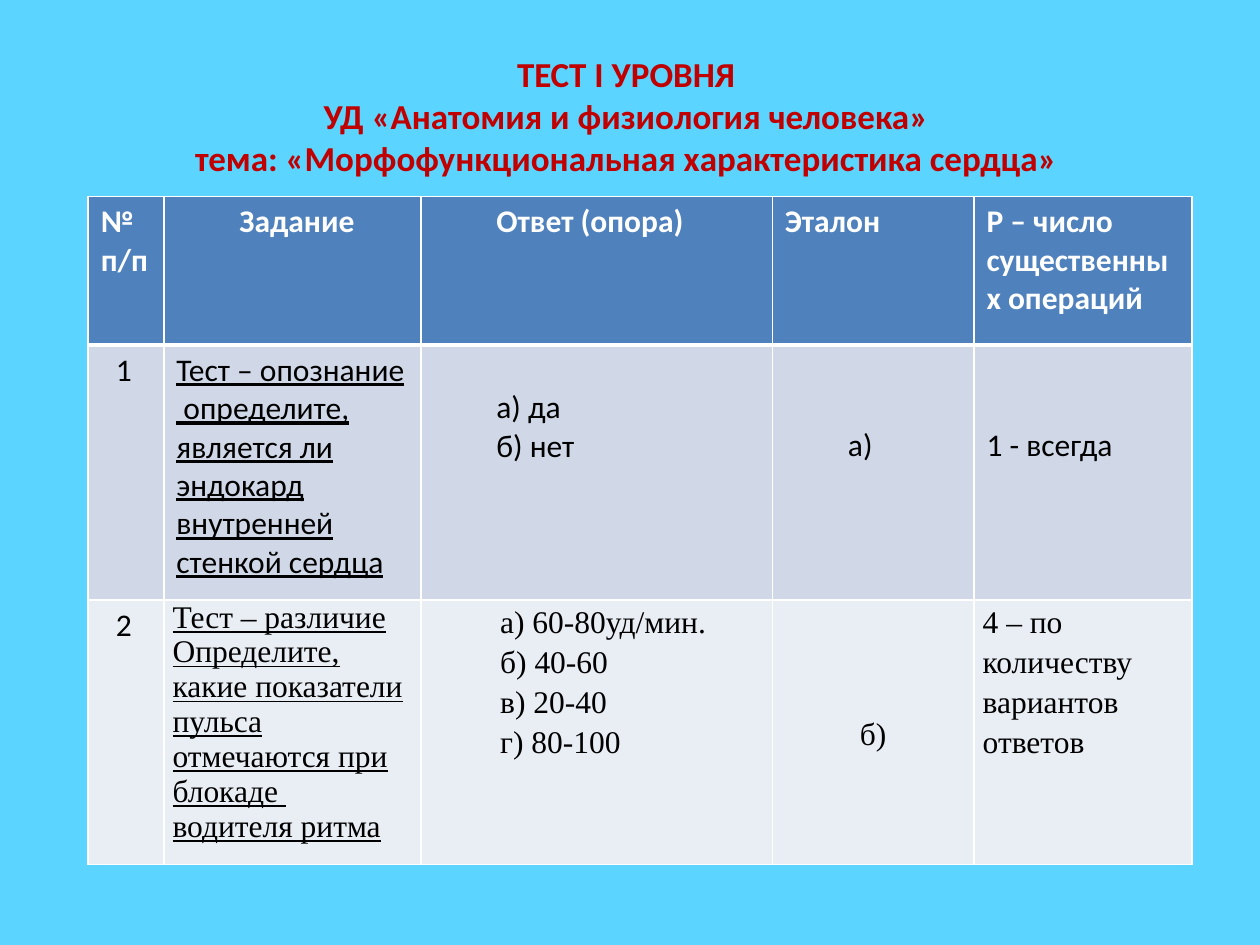
from dataclasses import dataclass

from lxml import etree
from pptx import Presentation
from pptx.dml.color import RGBColor
from pptx.enum import text
from pptx.oxml import ns
from pptx.util import Emu, Inches, Pt

WIDTH, HEIGHT = Inches(10), Inches(7.5)
SANS, SERIF = "Calibri", "Times New Roman"
WHITE, BLACK, RED, SKY = "FFFFFF", "000000", "C00000", "5BD4FF"
COLUMN_SHARES = [0.06, 0.204, 0.279, 0.16, 0.173]
ROW_SHARES = [0.157, 0.27, 0.28]
ROW_FILLS = ["4F81BD", "D0D8E8", "E9EDF4"]
LINE = 0.3
INDENT = 0.6
NUMBER_INDENT = 0.22


@dataclass
class Entry:
    words: str
    left: float = 0.1
    top: float = 0.05
    font: str = SANS
    color: str = BLACK
    bold: bool = False
    underline: bool = False
    spacing: float = 1.0
    centered: bool = False


def heading(words: str, left: float = 0.1) -> Entry:
    return Entry(words, left, color=WHITE, bold=True)


def serif(words: str, left: float = 0.07, **look) -> Entry:
    return Entry(words, left, 0, SERIF, **look)


ENTRIES = [
    [
        heading("№\nп/п"),
        heading("Задание", INDENT),
        heading("Ответ (опора)", INDENT),
        heading("Эталон"),
        heading("Р – число существенных операций"),
    ],
    [
        Entry("1", NUMBER_INDENT),
        Entry("Тест – опознание  определите, является ли эндокард "
              "внутренней стенкой сердца", underline=True),
        Entry("а) да\nб) нет", INDENT, 0.05 + LINE),
        Entry("а)", INDENT, 0.05 + 2 * LINE),
        Entry("1 - всегда", top=0.05 + 2 * LINE),
    ],
    [
        Entry("2", NUMBER_INDENT),
        serif("Тест – различие Определите, какие показатели пульса "
              "отмечаются при блокаде  водителя ритма", underline=True),
        serif("а) 60-80уд/мин.\nб) 40-60\nв) 20-40\nг) 80-100", 0.63, spacing=1.15),
        serif("б)", spacing=1.15, centered=True),
        serif("4 – по количеству вариантов ответов", spacing=1.15),
    ],
]


def rgb(value: str) -> RGBColor:
    return RGBColor.from_string(value)


def across(share: float) -> Emu:
    return Emu(round(WIDTH * share))


def down(share: float) -> Emu:
    return Emu(round(HEIGHT * share))


def write(frame, words: str, *, size: float, font: str, color: str,
          bold: bool = False, underline: bool = False,
          spacing: float = 1.0, centered: bool = False) -> None:
    frame.word_wrap = True
    for index, line in enumerate(words.split("\n")):
        para = frame.add_paragraph() if index else frame.paragraphs[0]
        para.alignment = text.PP_ALIGN.CENTER if centered else text.PP_ALIGN.LEFT
        para.line_spacing = spacing
        span = para.add_run()
        span.text = line
        span.font.size = Pt(size)
        span.font.name = font
        span.font.bold = bold
        span.font.underline = underline
        span.font.color.rgb = rgb(color)


def outline(cell, top: float, bottom: float) -> None:
    properties = cell._tc.get_or_add_tcPr()
    for side, width in (("L", 1), ("R", 1), ("T", top), ("B", bottom)):
        edge = etree.SubElement(properties, ns.qn(f"a:ln{side}"), w=str(Pt(width)))
        fill = etree.SubElement(edge, ns.qn("a:solidFill"))
        etree.SubElement(fill, ns.qn("a:srgbClr"), val=WHITE)


def fill_cell(cell, entry: Entry, row: int) -> None:
    outline(cell, 3 if row == 1 else 1, 3 if row == 0 else 1)
    cell.fill.solid()
    cell.fill.fore_color.rgb = rgb(ROW_FILLS[row])
    cell.margin_left = Inches(entry.left)
    cell.margin_right = Inches(min(entry.left, 0.1))
    cell.margin_top = Inches(entry.top)
    cell.margin_bottom = Inches(min(entry.top, 0.05))
    cell.vertical_anchor = text.MSO_ANCHOR.MIDDLE if entry.centered else text.MSO_ANCHOR.TOP
    write(cell.text_frame, entry.words, size=18, font=entry.font, color=entry.color,
          bold=entry.bold, underline=entry.underline,
          spacing=entry.spacing, centered=entry.centered)


def add_title(page) -> None:
    box = page.shapes.add_textbox(across(0.047), down(0.03), across(0.9), down(0.184))
    box.text_frame.vertical_anchor = text.MSO_ANCHOR.MIDDLE
    write(box.text_frame,
          "ТЕСТ I УРОВНЯ\nУД «Анатомия и физиология человека»\n"
          "тема: «Морфофункциональная характеристика сердца»",
          size=20, font=SANS, color=RED, bold=True, centered=True)


def add_test_table(page) -> None:
    table = page.shapes.add_table(
        len(ROW_SHARES), len(COLUMN_SHARES), across(0.07), down(0.208),
        across(sum(COLUMN_SHARES)), down(sum(ROW_SHARES))).table
    table.horz_banding = False
    for column, share in zip(table.columns, COLUMN_SHARES):
        column.width = across(share)
    for row, share in zip(table.rows, ROW_SHARES):
        row.height = down(share)
    for row, entries in enumerate(ENTRIES):
        for column, entry in enumerate(entries):
            fill_cell(table.cell(row, column), entry, row)


def main() -> None:
    deck = Presentation()
    deck.slide_width, deck.slide_height = WIDTH, HEIGHT
    page = deck.slides.add_slide(deck.slide_layouts[6])
    page.background.fill.solid()
    page.background.fill.fore_color.rgb = rgb(SKY)
    add_title(page)
    add_test_table(page)
    deck.save("out.pptx")


if __name__ == "__main__":
    main()
